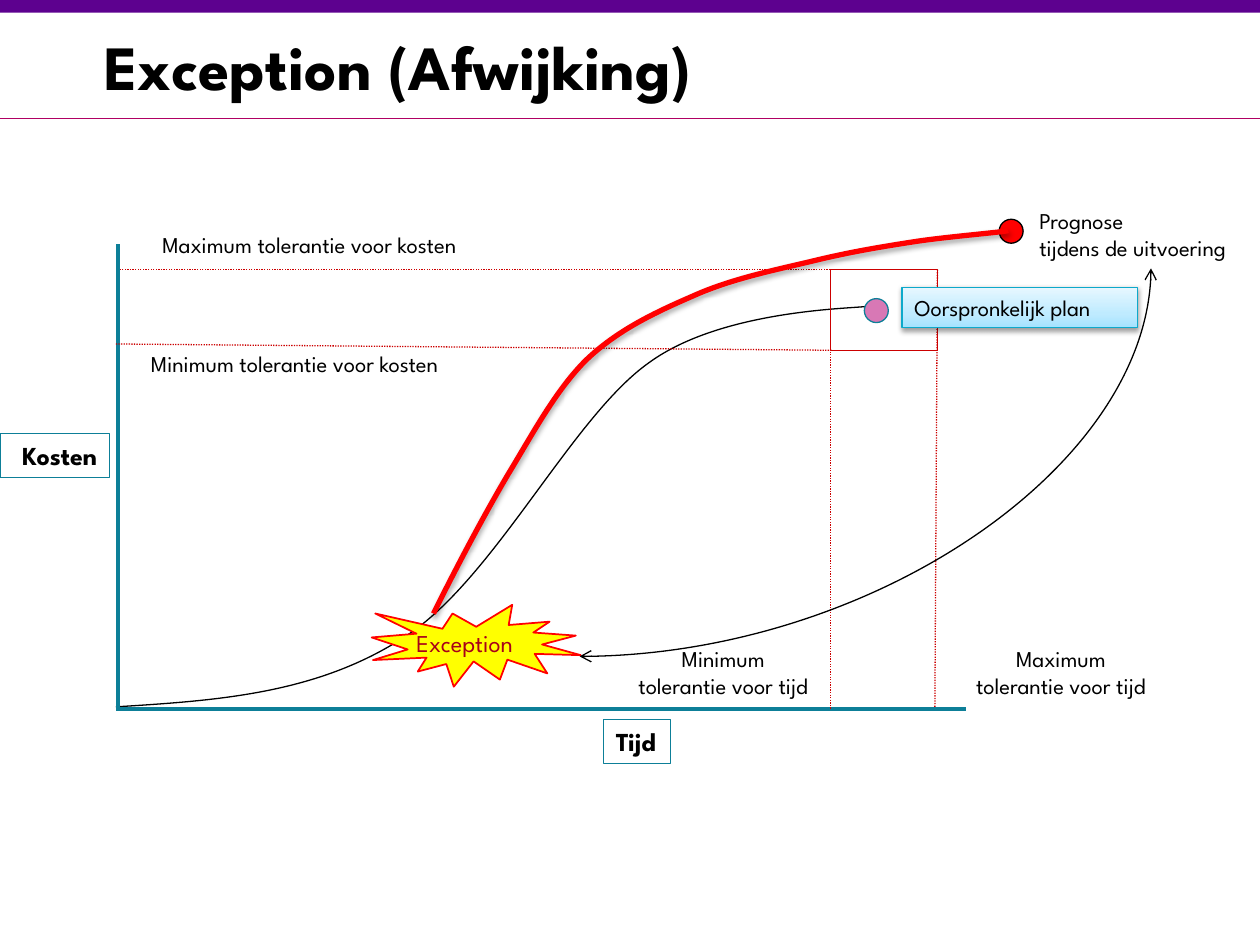
"""Build the slide on exceptions: cost and time tolerances of a project plan."""
import copy
from dataclasses import dataclass

import lxml.etree
import pptx
import pptx.dml.color
import pptx.enum.dml
import pptx.enum.shapes
import pptx.enum.text
import pptx.oxml.ns
import pptx.util

Inches = pptx.util.Inches
Pt = pptx.util.Pt
qn = pptx.oxml.ns.qn
SHAPE = pptx.enum.shapes.MSO_SHAPE
CONNECTOR = pptx.enum.shapes.MSO_CONNECTOR
ANCHOR = pptx.enum.text.MSO_ANCHOR
ALIGN = pptx.enum.text.PP_ALIGN


@dataclass(frozen=True)
class Theme:
    font: str = "League Spartan"
    title: float = 36
    axis: float = 14.8
    alarm: float = 13.8
    label: float = 12.9
    black: str = "000000"
    white: str = "FFFFFF"
    purple: str = "5D018F"
    magenta: str = "B00063"
    teal: str = "0D7F98"
    cyan: str = "0DA9CB"
    limit: str = "CC0000"
    red: str = "FF0000"
    yellow: str = "FFFF00"
    pink: str = "D878B5"
    crimson: str = "A80019"
    sky: tuple = ((0, "A5E3FF"), (0.35, "BFEBFF"), (1, "E7F7FF"))


def rgb(value):
    return pptx.dml.color.RGBColor.from_string(value)


def write_text(tf, text, *, font, size, color, bold=False, align=ALIGN.LEFT,
               anchor=ANCHOR.TOP, wrap=False, inset=None):
    tf.word_wrap = wrap
    tf.vertical_anchor = anchor
    tf.auto_size = (pptx.enum.text.MSO_AUTO_SIZE.NONE if wrap
                    else pptx.enum.text.MSO_AUTO_SIZE.SHAPE_TO_FIT_TEXT)
    if inset is not None:
        tf.margin_left = tf.margin_top = tf.margin_right = tf.margin_bottom = Inches(inset)
    for i, line in enumerate(text.split("\n")):
        p = tf.paragraphs[0] if i == 0 else tf.add_paragraph()
        p.alignment = align
        r = p.add_run()
        r.text = line
        r.font.name, r.font.size, r.font.bold = font, Pt(size), bold
        r.font.color.rgb = rgb(color)


class Diagram:
    def __init__(self, slide, theme):
        self.slide = slide
        self.theme = theme

    def style(self, sp, fill=None, line=None, width=0.75, shadow=None):
        sp.shadow.inherit = False
        if fill is None:
            sp.fill.background()
        elif isinstance(fill, tuple):
            self.gradient(sp, fill)
        else:
            sp.fill.solid()
            sp.fill.fore_color.rgb = rgb(fill)
        if line:
            sp.line.color.rgb = rgb(line)
            sp.line.width = Pt(width)
        else:
            sp.line.fill.background()
        if shadow:
            self.drop_shadow(sp, *shadow)

    def gradient(self, sp, stops):
        sp.fill.gradient()
        sp.fill.gradient_angle = 90
        stop_list = sp._element.spPr.find(".//" + qn("a:gsLst"))
        stop_list.append(copy.deepcopy(stop_list[-1]))
        for stop, (position, color) in zip(sp.fill.gradient_stops, stops):
            stop.position = position
            stop.color.rgb = rgb(color)

    def drop_shadow(self, sp, alpha, distance):
        effects = sp._element.spPr.find(qn("a:effectLst"))
        outer = lxml.etree.SubElement(
            effects, qn("a:outerShdw"), blurRad=str(Pt(3.1)), dist=str(Pt(distance)),
            dir="5400000", rotWithShape="0")
        color = lxml.etree.SubElement(outer, qn("a:srgbClr"), val=self.theme.black)
        lxml.etree.SubElement(color, qn("a:alpha"), val=str(alpha * 1000))

    def shape(self, kind, x, y, w, h, **look):
        sp = self.slide.shapes.add_shape(kind, Inches(x), Inches(y), Inches(w), Inches(h))
        self.style(sp, **look)
        return sp

    def label(self, text, x, y, w, h, size=None, color=None, kind=None, look=None, **fmt):
        if kind is None:
            sp = self.slide.shapes.add_textbox(Inches(x), Inches(y), Inches(w), Inches(h))
            if look:
                self.style(sp, **look)
        else:
            sp = self.shape(kind, x, y, w, h, **(look or {}))
        write_text(sp.text_frame, text, font=self.theme.font, size=size or self.theme.label,
                   color=color or self.theme.black, **fmt)
        return sp

    def line(self, x1, y1, x2, y2, color, width=0.75, dotted=False, kind=CONNECTOR.STRAIGHT):
        cx = self.slide.shapes.add_connector(kind, Inches(x1), Inches(y1), Inches(x2), Inches(y2))
        cx.line.color.rgb = rgb(color)
        cx.line.width = Pt(width)
        if dotted:
            cx.line.dash_style = pptx.enum.dml.MSO_LINE.ROUND_DOT
        lxml.etree.SubElement(cx._element.spPr, qn("a:effectLst"))
        return cx

    def double_arrow(self, x1, y1, x2, y2, color):
        cx = self.line(x1, y1, x2, y2, color, kind=CONNECTOR.CURVE)
        cx._element.spPr.find(qn("a:prstGeom")).set("prst", "curvedConnector2")
        ln = cx._element.spPr.find(qn("a:ln"))
        for end in ("a:headEnd", "a:tailEnd"):
            lxml.etree.SubElement(ln, qn(end), type="arrow")
        return cx

    def curve(self, points, **look):
        """Draw a start point followed by cubic segments of three points each."""
        start, *rest = [(Inches(x), Inches(y)) for x, y in points]
        builder = self.slide.shapes.build_freeform(*start)
        builder.add_line_segments(rest, close=False)
        sp = builder.convert_to_shape()
        outline = sp._element.spPr.find(".//" + qn("a:path"))
        steps = outline.findall(qn("a:lnTo"))
        for i in range(0, len(steps), 3):
            cubic = lxml.etree.SubElement(outline, qn("a:cubicBezTo"))
            for step in steps[i:i + 3]:
                cubic.append(step[0])
                outline.remove(step)
        self.style(sp, **look)
        return sp


def main():
    prs = pptx.Presentation()
    prs.slide_width, prs.slide_height = Inches(10), Inches(7.5)
    t = Theme()
    d = Diagram(prs.slides.add_slide(prs.slide_layouts[6]), t)

    d.shape(SHAPE.RECTANGLE, 0, 0, 10, 0.1, fill=t.purple)
    d.line(0, 0.94, 10, 0.94, t.magenta)
    d.label("Exception (Afwijking)", 0.73, 0.13, 9.27, 0.78, t.title, bold=True,
            anchor=ANCHOR.MIDDLE, wrap=True, look={"fill": t.white})

    d.curve([(0.92, 5.61), (1.72, 5.56), (2.52, 5.51), (3.22, 5.05),
             (3.92, 4.6), (4.54, 3.31), (5.15, 2.88),
             (5.75, 2.44), (6.85, 2.45), (6.88, 2.43)], line=t.black)
    d.line(0.94, 1.94, 0.94, 5.63, t.teal, 2.25)
    d.line(0.92, 5.63, 7.67, 5.63, t.teal, 2.25)
    for text, x, y, w, align in (("Kosten", 0, 3.44, 0.87, ALIGN.RIGHT),
                                 ("Tijd", 4.79, 5.71, 0.53, ALIGN.LEFT)):
        d.label(text, x, y, w, 0.35, t.axis, kind=SHAPE.RECTANGLE, bold=True,
                align=align, look={"line": t.teal})

    d.label("Maximum tolerantie voor kosten", 1.19, 1.78, 3.02, 0.32)
    d.label("Minimum tolerantie voor kosten", 1.1, 2.73, 2.96, 0.32)
    for ends in ((6.6, 2.78, 0.92, 2.73), (6.63, 2.14, 0.94, 2.14),
                 (6.59, 2.79, 6.59, 5.63), (7.44, 2.14, 7.42, 5.61)):
        d.line(*ends, t.limit, dotted=True)
    d.shape(SHAPE.RECTANGLE, 6.59, 2.14, 0.85, 0.64, line=t.limit)
    for bound, x in (("Maximum", 7.52), ("Minimum", 4.84)):
        d.label(f"{bound}\ntolerantie voor tijd", x, 5.07, 1.8, 0.54, align=ALIGN.CENTER)

    d.shape(SHAPE.OVAL, 6.86, 2.37, 0.19, 0.19, fill=t.pink, line=t.teal)
    d.label("Oorspronkelijk plan", 7.16, 2.28, 1.87, 0.32, kind=SHAPE.RECTANGLE,
            look={"fill": t.sky, "line": t.cyan, "shadow": (38, 1.6)})
    forecast = d.label("Prognose\ntijdens de uitvoering", 8.15, 1.59, 1.97, 0.54)
    d.shape(SHAPE.OVAL, 7.93, 1.74, 0.19, 0.19, fill=t.red, line=t.black)
    d.label("Exception", 2.95, 4.8, 1.66, 0.65, t.alarm, t.crimson, kind=SHAPE.EXPLOSION1,
            anchor=ANCHOR.MIDDLE, inset=0,
            look={"fill": t.yellow, "line": t.red, "width": 1})
    d.double_arrow(4.6, 5.21, 9.13, 2.13, t.black).end_connect(forecast, 2)
    d.curve([(3.44, 4.87), (3.63, 4.49), (3.83, 4.11), (4.03, 3.77),
             (4.23, 3.44), (4.41, 3.1), (4.65, 2.86),
             (4.9, 2.62), (5.2, 2.48), (5.5, 2.35),
             (5.81, 2.21), (6.17, 2.14), (6.46, 2.07),
             (6.75, 2), (6.99, 1.96), (7.25, 1.92),
             (7.5, 1.88), (8, 1.84), (8, 1.83)],
            line=t.red, width=3, shadow=(35, 1.8))

    prs.save("out.pptx")


if __name__ == "__main__":
    main()
